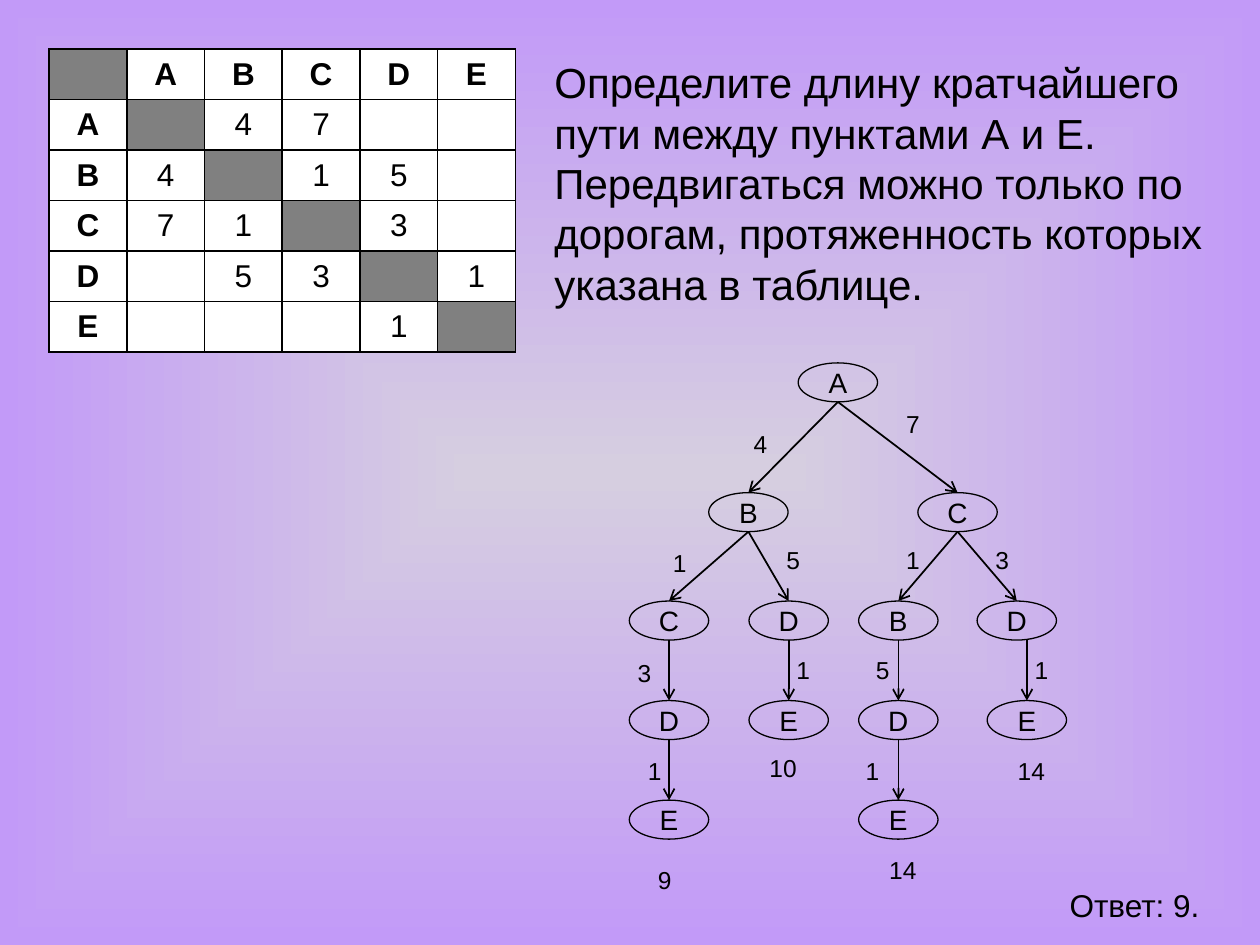
"""Build a slide on the shortest route from A to E: road table, route tree and answer."""
from dataclasses import dataclass
from pptx import Presentation
from pptx.dml.color import RGBColor as Rgb
from pptx.enum.shapes import MSO_CONNECTOR as Link, MSO_SHAPE as Form
from pptx.enum.text import MSO_ANCHOR as Anchor, MSO_AUTO_SIZE as Fit, PP_ALIGN as Align
from pptx.oxml import parse_xml
from pptx.oxml.ns import nsdecls, qn
from pptx.util import Inches, Pt


@dataclass
class Theme:
    font: str = "Arial"
    ink: str = "000000"
    paper: str = "FFFFFF"
    gray: str = "808080"
    inner: str = "D6CEE0"
    outer: str = "C29AF8"
    task: int = 24
    body: int = 18
    node: int = 16
    label: int = 14
    rule: float = 1
    ring: float = 0.75


theme = Theme()


def style(frame, size, align=Align.CENTER, bold=False):
    for par in frame.paragraphs:
        par.alignment = align
        for run in par.runs:
            run.font.name = theme.font
            run.font.size = Pt(size)
            run.font.bold = bold
            run.font.color.rgb = Rgb.from_string(theme.ink)


def write(text, left, top, width, height, size, inset=0.04, align=Align.CENTER):
    box = slide.shapes.add_textbox(Inches(left), Inches(top), Inches(width), Inches(height))
    frame = box.text_frame
    frame.word_wrap = True
    frame.auto_size = Fit.SHAPE_TO_FIT_TEXT
    frame.margin_left = frame.margin_right = Inches(inset)
    frame.text = text
    style(frame, size, align)


deck = Presentation()
deck.slide_width, deck.slide_height = Inches(10), Inches(7.5)
slide = deck.slides.add_slide(deck.slide_layouts[5])

fill = slide.background.fill
fill.gradient()
for stop, color in zip(fill.gradient_stops, (theme.inner, theme.outer)):
    stop.color.rgb = Rgb.from_string(color)
grad = slide.element.find(".//" + qn("a:gradFill"))
grad.replace(grad.find(qn("a:lin")), parse_xml(
    f'<a:path {nsdecls("a")} path="shape">'
    '<a:fillToRect l="50000" t="50000" r="50000" b="50000"/></a:path>'))

title = slide.shapes.title
title.left, title.top = Inches(4.3), Inches(0.39)
title.width, title.height = Inches(5.55), Inches(2.12)
frame = title.text_frame
frame.text = ("Определите длину кратчайшего пути между пунктами А и E. "
              "Передвигаться можно только по дорогам, протяженность которых указана в таблице.")
frame.word_wrap = True
frame.auto_size = Fit.SHAPE_TO_FIT_TEXT
frame.vertical_anchor = Anchor.MIDDLE
style(frame, theme.task, Align.LEFT)

towns = "ABCDE"
roads = {"AB": 4, "AC": 7, "BC": 1, "BD": 5, "CD": 3, "DE": 1}
count = len(towns) + 1
table = slide.shapes.add_table(count, count, Inches(0.39), Inches(0.39),
                               Inches(3.7), Inches(2.4)).table
table.first_row = table.horz_banding = False
for row in range(count):
    for col in range(count):
        cell = table.cell(row, col)
        head = row == 0 or col == 0
        if row == col:
            text = ""
        elif head:
            text = towns[row + col - 1]
        else:
            pair = "".join(sorted(towns[row - 1] + towns[col - 1]))
            text = str(roads.get(pair, ""))
        cell.text = text
        cell.vertical_anchor = Anchor.MIDDLE
        style(cell.text_frame, theme.body, bold=head)
        props = cell._tc.get_or_add_tcPr()
        for side in ("lnL", "lnR", "lnT", "lnB"):
            props.append(parse_xml(
                f'<a:{side} {nsdecls("a")} w="{Pt(theme.rule)}"><a:solidFill>'
                f'<a:srgbClr val="{theme.ink}"/></a:solidFill></a:{side}>'))
        cell.fill.solid()
        cell.fill.fore_color.rgb = Rgb.from_string(theme.gray if row == col else theme.paper)

wide, high = 0.63, 0.31
tops = [2.88, 3.91, 4.77, 5.56, 6.35]
nodes = {
    "A": 6.65, "AB": 5.94, "AC": 7.6,
    "ABC": 5.31, "ABD": 6.26, "ACB": 7.13, "ACD": 8.07,
    "ABCD": 5.31, "ABDE": 6.26, "ACBD": 7.13, "ACDE": 8.15,
    "ABCDE": 5.31, "ACBDE": 7.13,
}
for route, mid in nodes.items():
    level = len(route) - 1
    top = tops[level]
    if level:
        start = nodes[route[:-1]] if level < 3 else mid
        line = slide.shapes.add_connector(
            Link.STRAIGHT, Inches(start), Inches(tops[level - 1] + high), Inches(mid), Inches(top))
        line.line.color.rgb = Rgb.from_string(theme.ink)
        line.line.width = Pt(theme.rule)
        line.line._get_or_add_ln().append(parse_xml(f'<a:tailEnd {nsdecls("a")} type="arrow"/>'))
        line._element.spPr.append(parse_xml(f'<a:effectLst {nsdecls("a")}/>'))
    oval = slide.shapes.add_shape(Form.OVAL, Inches(mid - wide / 2), Inches(top),
                                  Inches(wide), Inches(high))
    oval.shadow.inherit = False
    oval.fill.background()
    oval.line.color.rgb = Rgb.from_string(theme.ink)
    oval.line.width = Pt(theme.ring)
    frame = oval.text_frame
    frame.margin_left = frame.margin_right = Inches(0.04)
    frame.margin_top = frame.margin_bottom = Inches(0.04)
    frame.vertical_anchor = Anchor.MIDDLE
    frame.text = route[-1]
    style(frame, theme.node)

write("4", 5.94, 3.36, 0.39, 0.34, theme.label, align=Align.LEFT)
labels = [
    ("7", 7.05, 3.2), ("1", 5.2, 4.3), ("5", 6.1, 4.28), ("1", 7.05, 4.28), ("3", 7.76, 4.28),
    ("3", 4.92, 5.17), ("1", 6.18, 5.15), ("5", 6.81, 5.15), ("1", 8.07, 5.15),
    ("1", 5, 5.95), ("10", 6.02, 5.93), ("1", 6.73, 5.95), ("14", 7.99, 5.95),
    ("9", 5.08, 6.82), ("14", 6.97, 6.74),
]
for text, left, top in labels:
    write(text, left, top, 0.39, 0.34, theme.label)

write("Ответ: 9.", 8.39, 6.98, 1.42, 0.4, theme.body, inset=0.1, align=Align.LEFT)

deck.save("out.pptx")
